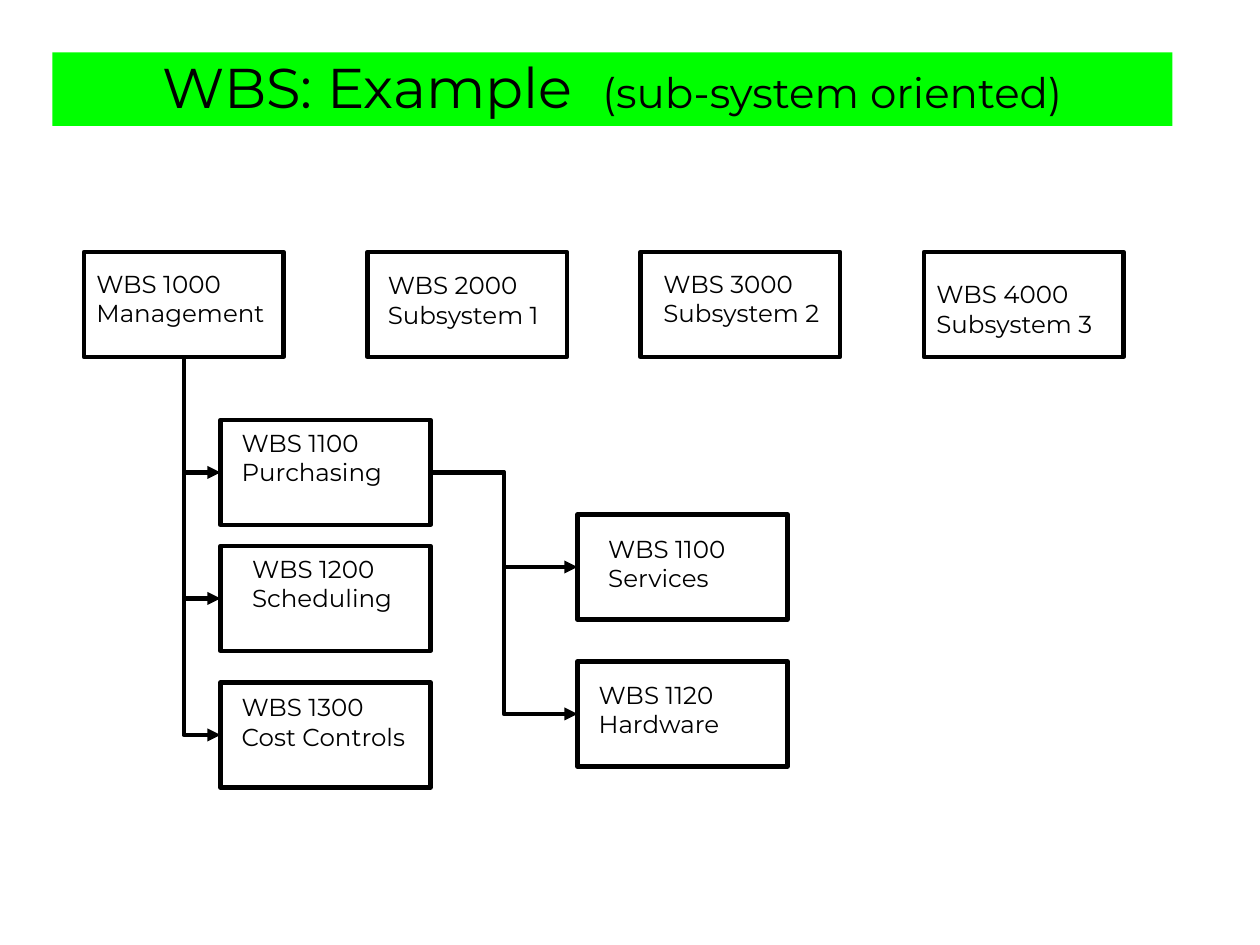
from collections import namedtuple
from dataclasses import dataclass

from lxml.etree import SubElement
from pptx import Presentation
from pptx.dml.color import RGBColor
from pptx.enum.shapes import MSO_CONNECTOR as Connector, MSO_SHAPE as Shape
from pptx.enum.text import MSO_ANCHOR as Anchor, MSO_AUTO_SIZE as AutoSize, PP_ALIGN as Align
from pptx.oxml.ns import qn
from pptx.util import Pt

Box = namedtuple("Box", "left top width height")
# Label position (dx, dy) is relative to its box
Node = namedtuple("Node", "code name dx dy label_width")


@dataclass(frozen=True)
class Theme:
    font: str = "Montserrat"
    ink: RGBColor = RGBColor(0, 0, 0)
    band: RGBColor = RGBColor(0, 255, 0)
    title_size: int = 32
    subtitle_size: int = 24
    label_size: int = 14
    line_width: float = 2.5


THEME = Theme()
TOP, BOTTOM, LEFT, RIGHT = 0, 2, 1, 3
LABEL_HEIGHT = 41


def points(box):
    return [Pt(value) for value in box]


def style_font(font, size):
    font.name = THEME.font
    font.size = Pt(size)
    font.color.rgb = THEME.ink


def style_line(line):
    line.color.rgb = THEME.ink
    line.width = Pt(THEME.line_width)


def add_title(slide, box):
    band = slide.shapes.add_shape(Shape.RECTANGLE, *points(box))
    band.shadow.inherit = False
    band.fill.solid()
    band.fill.fore_color.rgb = THEME.band
    band.line.fill.background()
    frame = band.text_frame
    frame.word_wrap = True
    frame.vertical_anchor = Anchor.BOTTOM
    paragraph = frame.paragraphs[0]
    paragraph.alignment = Align.CENTER
    for text, size in (("WBS: Example  ", THEME.title_size),
                       ("(sub-system oriented)", THEME.subtitle_size)):
        run = paragraph.add_run()
        run.text = text
        style_font(run.font, size)


def add_node(slide, box, node):
    rectangle = slide.shapes.add_shape(Shape.RECTANGLE, *points(box))
    rectangle.shadow.inherit = False
    rectangle.fill.background()
    style_line(rectangle.line)

    label_box = Box(box.left + node.dx, box.top + node.dy, node.label_width, LABEL_HEIGHT)
    frame = slide.shapes.add_textbox(*points(label_box)).text_frame
    frame.word_wrap = False
    frame.auto_size = AutoSize.SHAPE_TO_FIT_TEXT
    frame.text = f"{node.code}\n{node.name}"
    for paragraph in frame.paragraphs:
        style_font(paragraph.font, THEME.label_size)
    return rectangle


def add_row(slide, box, lefts, nodes):
    """Place nodes side by side; box is the first one."""
    return [add_node(slide, box._replace(left=left), node) for left, node in zip(lefts, nodes)]


def add_column(slide, box, tops, nodes):
    """Stack nodes; box is the first one."""
    return [add_node(slide, box._replace(top=top), node) for top, node in zip(tops, nodes)]


def add_elbow(slide, parent, child, parent_side):
    connector = slide.shapes.add_connector(Connector.ELBOW, 0, 0, 0, 0)
    connector.begin_connect(parent, parent_side)
    connector.end_connect(child, LEFT)
    style_line(connector.line)
    properties = connector.element.spPr
    SubElement(connector.line._get_or_add_ln(), qn("a:tailEnd"), type="triangle")
    SubElement(properties, qn("a:effectLst"))
    if parent_side == BOTTOM:
        # One bend, down then right: a quarter turn about the same centre
        properties.find(qn("a:prstGeom")).set("prst", "bentConnector2")
        width, height = connector.width, connector.height
        connector.left += (width - height) // 2
        connector.top += (height - width) // 2
        connector.width, connector.height = height, width
        transform = properties.find(qn("a:xfrm"))
        transform.set("rot", "16200000")
        transform.set("flipH", "1")


def main():
    presentation = Presentation()
    presentation.slide_width, presentation.slide_height = Pt(720), Pt(540)
    slide = presentation.slides.add_slide(presentation.slide_layouts[6])

    add_title(slide, Box(30, 30, 640, 42))

    # Level 1: management and subsystems
    management, *_ = add_row(slide, Box(48, 144, 114, 60), (48, 210, 366, 528), (
        Node("WBS 1000", "Management", 0, 6, 114),
        Node("WBS 2000", "Subsystem 1", 4.5, 7, 112),
        Node("WBS 3000", "Subsystem 2", 6, 6, 112),
        Node("WBS 4000", "Subsystem 3", 0, 12, 112),
    ))

    # Level 2: management tasks
    tasks = add_column(slide, Box(126, 240, 120, 60), (240, 312, 390), (
        Node("WBS 1100", "Purchasing", 5, 1, 100),
        Node("WBS 1200", "Scheduling", 11, 1, 99),
        Node("WBS 1300", "Cost Controls", 5, 2, 119),
    ))

    # Level 3: purchasing items
    items = add_column(slide, Box(330, 294, 120, 60), (294, 378), (
        Node("WBS 1100", "Services", 10.5, 7.5, 91.5),
        Node("WBS 1120", "Hardware", 5, 7, 91.5),
    ))

    # Links between levels
    for item in items:
        add_elbow(slide, tasks[0], item, RIGHT)
    for task in tasks:
        add_elbow(slide, management, task, BOTTOM)

    presentation.save("out.pptx")


if __name__ == "__main__":
    main()
